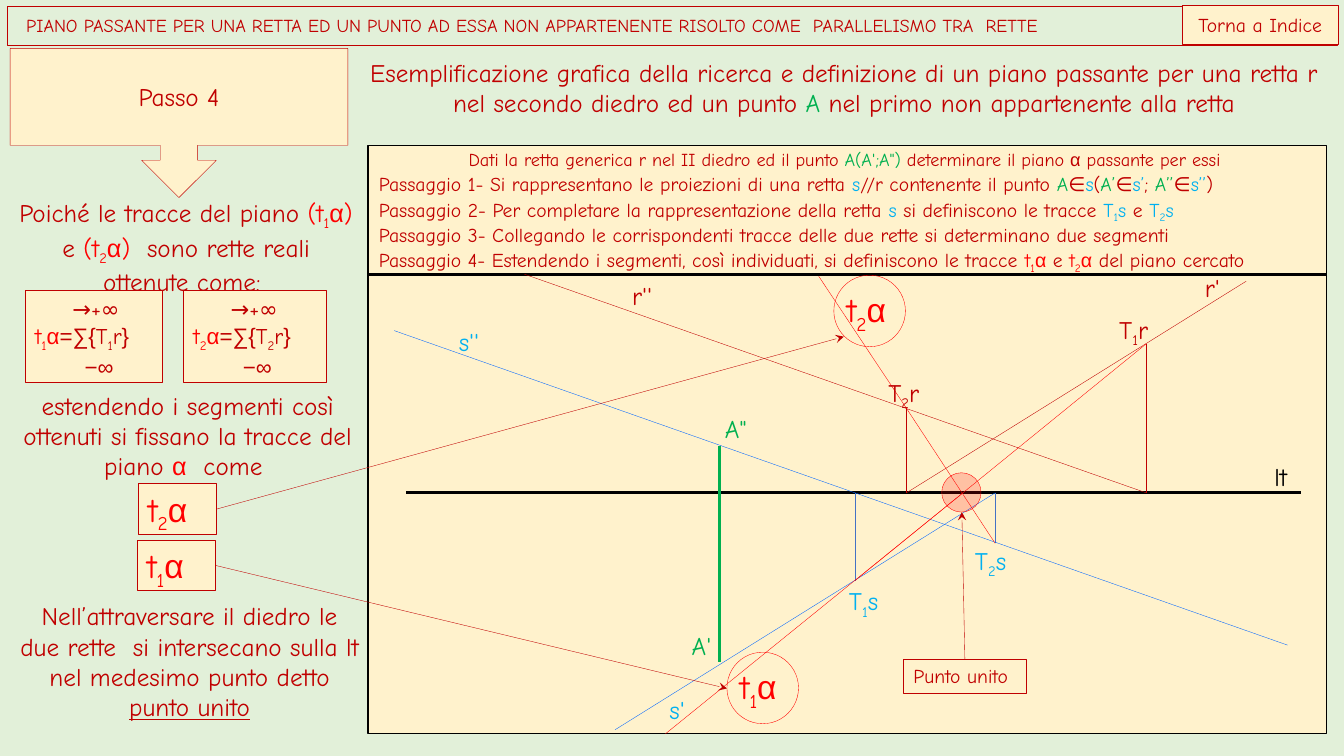
from pptx import Presentation
from pptx.dml.color import RGBColor
from pptx.enum.shapes import MSO_CONNECTOR, MSO_SHAPE
from pptx.enum.text import MSO_ANCHOR, MSO_AUTO_SIZE, PP_ALIGN
from pptx.oxml.ns import qn
from pptx.util import Inches, Pt
from lxml.etree import SubElement

ROWS = 75
MINT = RGBColor(0xE2, 0xF0, 0xD9)
CREAM = RGBColor(0xFF, 0xF2, 0xCC)
DARK = RGBColor(0xC0, 0x00, 0x00)
RED = RGBColor(0xFF, 0x00, 0x00)
GREEN = RGBColor(0x00, 0xB0, 0x50)
SKY = RGBColor(0x00, 0xB0, 0xF0)
BLUE = RGBColor(0x00, 0x66, 0xFF)
STEEL = RGBColor(0x44, 0x72, 0xC4)
BLACK = RGBColor(0x00, 0x00, 0x00)
FONT, MATH_FONT = "Comic Neue", "Arial"
MATH = {"α", "=∑{", "}", "−∞"}
SUB, UNDERLINE = "subscript", "underline"
CENTER, LEFT = PP_ALIGN.CENTER, PP_ALIGN.LEFT
RIGHT_SIDE, TOP_SIDE = 3, 0


class Board:
    """One slide on a grid of square cells; a run is (text, colour[, SUB or UNDERLINE])."""

    def __init__(self, presentation):
        presentation.slide_width = Inches(13.33)
        presentation.slide_height = Inches(7.5)
        self.cell = presentation.slide_height / ROWS
        slide = presentation.slides.add_slide(presentation.slide_layouts[6])
        slide.background.fill.solid()
        slide.background.fill.fore_color.rgb = MINT
        self.shapes = slide.shapes

    def grid(self, *cells):
        return [round(value * self.cell) for value in cells]

    def add_runs(self, shape, paragraphs, size, align, indents=()):
        frame = shape.text_frame
        for number, runs in enumerate(paragraphs):
            paragraph = frame.add_paragraph() if number else frame.paragraphs[0]
            paragraph.alignment = align
            if indents:
                margin = self.grid(indents[number])[0]
                paragraph._p.get_or_add_pPr().set("marL", str(margin))
            for text, colour, *marks in runs:
                run = paragraph.add_run()
                run.text = text
                run.font.size = Pt(size)
                run.font.name = MATH_FONT if text in MATH else FONT
                run.font.color.rgb = colour
                if SUB in marks:
                    run.font._element.set("baseline", "-25000")
                if UNDERLINE in marks:
                    run.font.underline = True

    def text(self, box, runs, size=18, align=CENTER, inset=True):
        area = self.shapes.add_textbox(*self.grid(*box))
        frame = area.text_frame
        frame.word_wrap = True
        frame.auto_size = MSO_AUTO_SIZE.SHAPE_TO_FIT_TEXT
        if not inset:
            frame.margin_left = frame.margin_right = 0
            frame.margin_top = frame.margin_bottom = 0
        self.add_runs(area, [runs], size, align)
        return area

    def label(self, x, y, width, runs):
        """Point or line name in the drawing, without margins or wrapping."""
        area = self.text((x, y, width, 3), runs, align=LEFT, inset=False)
        area.text_frame.word_wrap = False

    def shape(self, box, preset=MSO_SHAPE.RECTANGLE, fill=None, line=DARK,
              weight=0.25, opacity=None):
        shape = self.shapes.add_shape(preset, *self.grid(*box))
        shape.shadow.inherit = False
        shape.line.color.rgb = line
        shape.line.width = Pt(weight)
        if fill is None:
            shape.fill.background()
        else:
            shape.fill.solid()
            shape.fill.fore_color.rgb = fill
        if opacity is not None:
            colour = shape.fill._xPr.find(qn("a:solidFill"))[0]
            SubElement(colour, qn("a:alpha")).set("val", str(opacity * 1000))
        return shape

    def box(self, box, paragraphs, size, align=LEFT, anchor=MSO_ANCHOR.TOP,
            indents=(), **style):
        shape = self.shape(box, **style)
        shape.text_frame.word_wrap = True
        shape.text_frame.vertical_anchor = anchor
        self.add_runs(shape, paragraphs, size, align, indents)
        return shape

    def line(self, start, end, colour=DARK, weight=0.25):
        line = self.shapes.add_connector(
            MSO_CONNECTOR.STRAIGHT, *self.grid(*start, *end))
        line.line.color.rgb = colour
        line.line.width = Pt(weight)
        SubElement(line._element.spPr, qn("a:effectLst"))
        return line

    def arrow(self, source, side, end):
        arrow = self.line((0, 0), end)
        arrow.begin_connect(source, side)
        SubElement(arrow.line._get_or_add_ln(), qn("a:tailEnd")).set("type", "stealth")


def indexed(letter, index, name, colour):
    return [(letter, colour), (index, colour, SUB), (name, colour)]


def trace(index, letter="t"):
    return indexed(letter, index, "α", RED)


def draw_header(board):
    callout = MSO_SHAPE.DOWN_ARROW_CALLOUT
    board.box((1, 4.8, 33.5, 14.8), [[("Passo 4", DARK)]], 18, CENTER,
              MSO_ANCHOR.MIDDLE, preset=callout, fill=CREAM)
    board.text((34.5, 5.2, 98.4, 7.1), [
        ("Esemplificazione grafica della ricerca e definizione di un piano passante "
         "per una retta r nel secondo diedro ed un punto ", DARK),
        ("A ", GREEN), ("nel primo non appartenente alla retta", DARK)])
    heading = board.box((0.7, 0.6, 131.9, 3.9), [[(
        "PIANO PASSANTE PER UNA RETTA ED UN PUNTO AD ESSA NON APPARTENENTE "
        "RISOLTO COME  PARALLELISMO TRA  RETTE", DARK)]], 13, anchor=MSO_ANCHOR.MIDDLE)
    heading.text_frame.margin_left = board.grid(1.9)[0]
    board.box((117.3, 0.5, 15.4, 3.9), [[("Torna a Indice", DARK)]], 14, CENTER,
              MSO_ANCHOR.MIDDLE, fill=CREAM)


def draw_steps(board):
    board.shape((36.5, 14.4, 95.1, 58.4), fill=CREAM, line=BLACK, weight=0)
    board.line((36.5, 27.2), (131.6, 27.2), BLACK, 0)
    board.text((36.5, 14.7, 95.1, 2.2), [
        ("Dati la retta generica r nel II diedro ed il punto ", DARK),
        ("A(A';A\") ", GREEN), ("determinare il piano ", DARK), ("α", DARK),
        (" passante per essi ", DARK)], 13, inset=False)
    steps = [
        [("Si rappresentano le proiezioni di una retta", DARK), (" s", SKY),
         ("//r contenente il punto ", DARK), ("A", GREEN), ("∈", DARK), ("s", SKY),
         ("(", DARK), ("A’", GREEN), ("∈", DARK), ("s’", SKY), ("; ", DARK),
         ("A’’", GREEN), ("∈", DARK), ("s’’", SKY), (")", DARK)],
        [("Per completare la rappresentazione della retta ", DARK), ("s", SKY),
         (" si definiscono le tracce ", DARK), *indexed("T", "1", "s", SKY),
         (" e ", DARK), *indexed("T", "2", "s", SKY)],
        [("Collegando le corrispondenti tracce delle due rette si determinano "
          "due segmenti", DARK)],
        [("Estendendo i segmenti, così individuati, si definiscono le tracce ", DARK),
         *trace("1"), (" e ", DARK), *trace("2"), (" del piano cercato", DARK)],
    ]
    for number, runs in enumerate(steps):
        board.text((36.6, 16.6 + 2.5 * number, 95.2, 3.4),
                   [(f"Passaggio {number + 1}- ", DARK), *runs], 14, LEFT)


def draw_projections(board):
    ground = 48.9
    t1r, t2r, t1s, t2s = (113.7, 34.1), (89.9, 40.5), (84.8, 57.6), (98.7, 53.9)
    meeting = (95.5, ground)
    board.line((40.3, ground), (129, ground), BLACK, 0)
    for (x, y), colour in ((t1r, DARK), (t2r, DARK), (t1s, STEEL), (t2s, STEEL)):
        board.line((x, ground), (x, y), colour)
    board.line((71.4, 44.2), (71.4, 65.7), GREEN, 0)
    for start, end, colour in (
            ((52, 27.2), (t1r[0], ground), DARK),
            ((t2r[0], ground), (123.6, 27.9), DARK),
            ((61, 72.4), (t2s[0], ground), BLUE),
            ((39.1, 32.8), (127.7, 64), BLUE),
            (t1s, t1r, RED), (t2r, t2s, RED),
            ((66, 72.8), meeting, RED), ((81.2, 27.4), t2r, RED)):
        board.line(start, end, colour)
    for x, y, width, name, colour in (
            (126.4, 45.8, 2.9, "lt", BLACK), (68.6, 62.5, 2.8, "A'", GREEN),
            (71.9, 41, 2.9, "A\"", GREEN), (119.5, 27, 2.2, "r'", DARK),
            (62.7, 27.8, 3.2, "r''", DARK), (66.4, 68.9, 2.2, "s'", SKY),
            (45.5, 32.4, 3.2, "s''", SKY)):
        board.label(x, y, width, [(name, colour)])
    for x, y, index, name, colour in (
            (111, 31.2, "1", "r", DARK), (88.1, 37.4, "2", "r", DARK),
            (84.2, 58.1, "1", "s", SKY), (96.7, 54.1, "2", "s", SKY)):
        board.label(x, y, 3.5, indexed("T", index, name, colour))


def draw_explanation(board):
    board.text((0.7, 19.1, 35.5, 10.1), [
        ("Poiché le tracce del piano ", DARK), *trace("1", "(t"), (") ", RED),
        ("e ", DARK), *trace("2", "(t"), (")  ", RED),
        ("sono rette reali ottenute come: ", DARK)])
    for index, x, width in (("1", 2.5, 13.6), ("2", 18.2, 14.2)):
        board.box((x, 28.8, width, 9.1), [
            [("→+∞", DARK)],
            [*trace(index), ("=∑{", DARK), *indexed("T", index, "r", DARK), ("}", DARK)],
            [("−∞", DARK)]], 16, indents=(3.7, 0, 4.9), fill=CREAM)
    board.text((1, 38.2, 35.2, 10.1), [
        ("estendendo i segmenti così ottenuti si fissano la tracce del piano ", DARK),
        ("α", RED), ("  come ", DARK)])
    board.text((0.9, 59.1, 35.8, 13.1), [
        ("Nell’attraversare il diedro le due rette  si intersecano sulla lt "
         "nel medesimo punto detto ", DARK), ("punto unito", DARK, UNDERLINE)])


def draw_traces(board):
    """Link each trace name on the left to its circle in the drawing."""
    for index, source, circle, target in (
            ("1", (13.6, 53.6), (72.1, 64.7), (72.1, 68.3)),
            ("2", (13.7, 48), (82.7, 27.3), (83.7, 33.4))):
        name = board.box((*source, 7.8, 5), [trace(index)], 24, fill=CREAM, weight=0.75)
        board.text((circle[0] + 0.3, circle[1] + 0.9, 7.8, 5), trace(index), 24, LEFT)
        board.shape((*circle, 7.1, 7.1), MSO_SHAPE.OVAL, line=RED)
        board.arrow(name, RIGHT_SIDE, target)
    board.shape((93.4, 46.9, 3.9, 3.9), MSO_SHAPE.OVAL, RED, RED, opacity=20)
    united = board.box((89.6, 65.4, 12.2, 3.4), [[("Punto unito", DARK)]], 14)
    board.arrow(united, TOP_SIDE, (95.4, 50.8))


def main():
    presentation = Presentation()
    board = Board(presentation)
    for draw in (draw_header, draw_steps, draw_projections, draw_explanation, draw_traces):
        draw(board)
    presentation.save("out.pptx")


if __name__ == "__main__":
    main()
